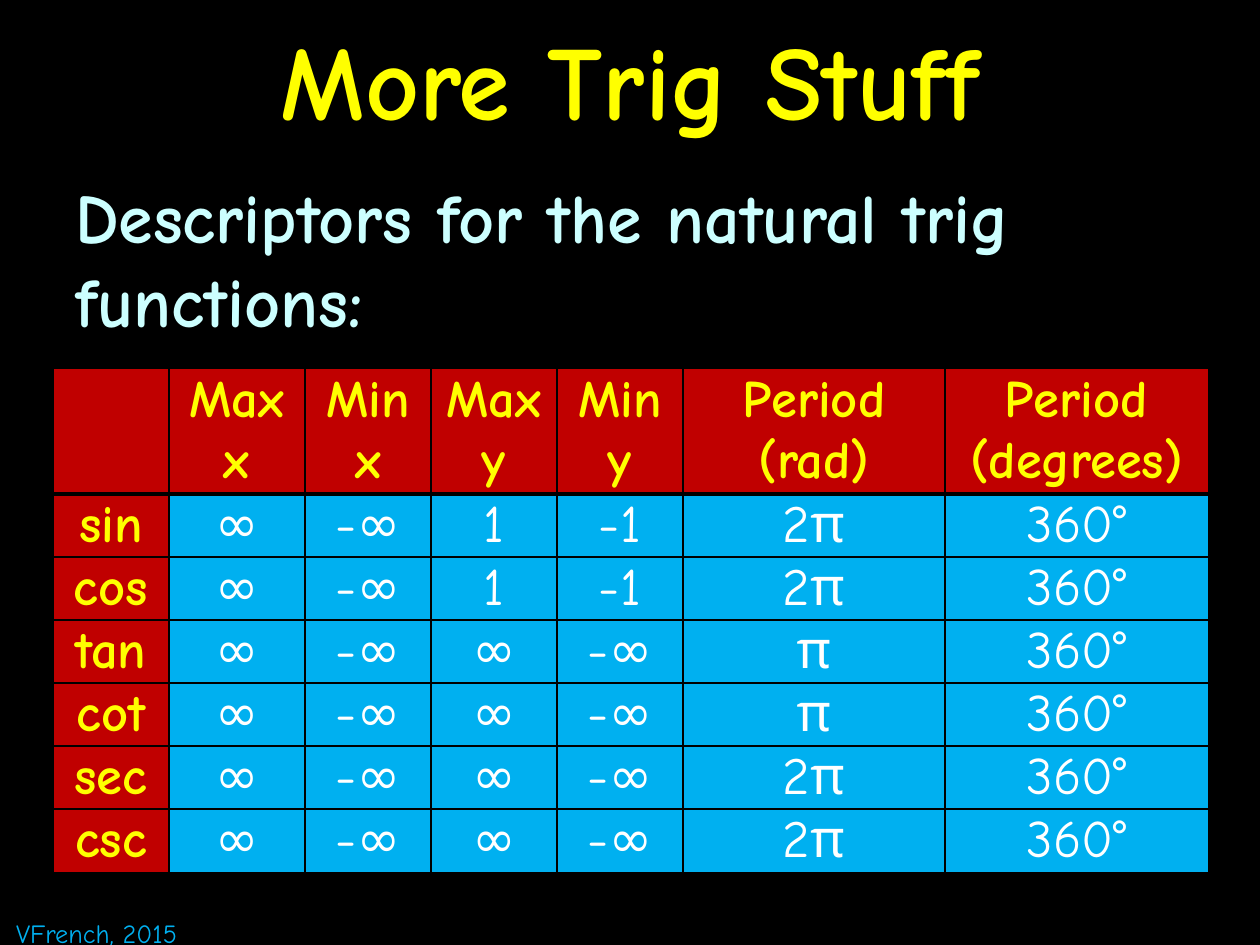
"""Build a slide with a table of descriptors for the natural trig functions."""
from dataclasses import dataclass

from lxml import etree
from pptx import Presentation
from pptx import util as u
from pptx.dml.color import RGBColor
from pptx.enum import text
from pptx.oxml.ns import qn

FONT = "Comic Neue"
COLORS = {
    "background": "000000",
    "heading": "FFFF00",
    "body": "CCFFFF",
    "value": "FFFFFF",
    "header_fill": "C00000",
    "value_fill": "00B0F0",
    "border": "000000",
    "credit": "00B0F0",
}
HEADERS = ["", "Max x", "Min x", "Max y", "Min y", "Period (rad)", "Period (degrees)"]
COLUMN_WIDTHS = [0.92, 1.08, 1, 1, 1, 2.08, 2.09]
HEADER_HEIGHT = 0.95
ROW_HEIGHT = 0.48


@dataclass(frozen=True)
class TrigFunction:
    """Name, y limit and period of a trig function."""

    name: str
    y_limit: str
    period: str

    def cells(self) -> list[str]:
        """Return the texts of the table row."""
        return [self.name, "∞", "-∞", self.y_limit, f"-{self.y_limit}", self.period, "360°"]


@dataclass(frozen=True)
class TextBlock:
    """Text box with its place and format."""

    content: str
    left: float
    top: float
    width: float
    height: float
    size: float
    color: str
    bold: bool = True
    centered: bool = False
    middle: bool = False
    wrap: bool = True
    space_before: float = 0


FUNCTIONS = [
    TrigFunction("sin", "1", "2π"),
    TrigFunction("cos", "1", "2π"),
    TrigFunction("tan", "∞", "π"),
    TrigFunction("cot", "∞", "π"),
    TrigFunction("sec", "∞", "2π"),
    TrigFunction("csc", "∞", "2π"),
]
TITLE = TextBlock("More Trig Stuff", 0, 0, 10, 1.25, 60, "heading", centered=True, middle=True)
BODY = TextBlock("Descriptors for the natural trig functions:", 0.5, 1.33, 9, 6.17, 40, "body",
                 space_before=8)
CREDIT = TextBlock("VFrench, 2015", 0.03, 7.23, 1.62, 0.35, 15, "credit", bold=False, wrap=False)


def write_text(frame, content: str, *, size: float, color: str, bold: bool = False,
               centered: bool = False, space_before: float = 0) -> None:
    """Write one formatted paragraph into a text frame."""
    paragraph = frame.paragraphs[0]
    paragraph.alignment = text.PP_ALIGN.CENTER if centered else text.PP_ALIGN.LEFT
    paragraph.space_before = u.Pt(space_before)
    run = paragraph.add_run()
    run.text = content
    run.font.name = FONT
    run.font.size = u.Pt(size)
    run.font.bold = bold
    run.font.color.rgb = RGBColor.from_string(COLORS[color])


def add_text(slide, block: TextBlock) -> None:
    """Add a text box to the slide."""
    box = slide.shapes.add_textbox(u.Inches(block.left), u.Inches(block.top),
                                   u.Inches(block.width), u.Inches(block.height))
    frame = box.text_frame
    frame.word_wrap = block.wrap
    frame.vertical_anchor = text.MSO_ANCHOR.MIDDLE if block.middle else text.MSO_ANCHOR.TOP
    write_text(frame, block.content, size=block.size, color=block.color, bold=block.bold,
               centered=block.centered, space_before=block.space_before)


def set_borders(cell, bottom_width: float) -> None:
    """Draw the four borders of a cell, ahead of its fill."""
    properties = cell._tc.get_or_add_tcPr()
    widths = {"a:lnL": 1, "a:lnR": 1, "a:lnT": 1, "a:lnB": bottom_width}
    for index, (tag, width) in enumerate(widths.items()):
        line = etree.Element(qn(tag), w=str(u.Pt(width)))
        fill = etree.SubElement(line, qn("a:solidFill"))
        etree.SubElement(fill, qn("a:srgbClr"), val=COLORS["border"])
        properties.insert(index, line)


def format_cell(cell, content: str, is_heading: bool, bottom_width: float) -> None:
    """Fill a cell, write its text and draw its borders."""
    cell.margin_left = cell.margin_right = u.Inches(0.07)
    cell.margin_top = cell.margin_bottom = 0
    cell.vertical_anchor = text.MSO_ANCHOR.MIDDLE
    cell.fill.solid()
    fill_color = COLORS["header_fill" if is_heading else "value_fill"]
    cell.fill.fore_color.rgb = RGBColor.from_string(fill_color)
    if content:
        write_text(cell.text_frame, content, size=30, bold=is_heading, centered=True,
                   color="heading" if is_heading else "value")
    set_borders(cell, bottom_width)


def add_trig_table(slide) -> None:
    """Add the table of trig functions."""
    rows = [HEADERS] + [function.cells() for function in FUNCTIONS]
    heights = [HEADER_HEIGHT] + [ROW_HEIGHT] * len(FUNCTIONS)
    table = slide.shapes.add_table(
        len(rows), len(HEADERS), u.Inches(0.42), u.Inches(2.92),
        u.Inches(sum(COLUMN_WIDTHS)), u.Inches(sum(heights))).table
    table.first_col = True
    table.horz_banding = False
    for column, width in zip(table.columns, COLUMN_WIDTHS):
        column.width = u.Inches(width)
    for row_index, (row, height) in enumerate(zip(rows, heights)):
        table.rows[row_index].height = u.Inches(height)
        for column_index, content in enumerate(row):
            format_cell(table.cell(row_index, column_index), content,
                        is_heading=row_index == 0 or column_index == 0,
                        bottom_width=3 if row_index == 0 else 1)


def main() -> None:
    """Build and save the presentation."""
    presentation = Presentation()
    presentation.slide_width = u.Inches(10)
    presentation.slide_height = u.Inches(7.5)
    slide = presentation.slides.add_slide(presentation.slide_layouts[6])
    slide.background.fill.solid()
    slide.background.fill.fore_color.rgb = RGBColor.from_string(COLORS["background"])
    add_text(slide, TITLE)
    add_text(slide, BODY)
    add_trig_table(slide)
    add_text(slide, CREDIT)
    presentation.save("out.pptx")


if __name__ == "__main__":
    main()
